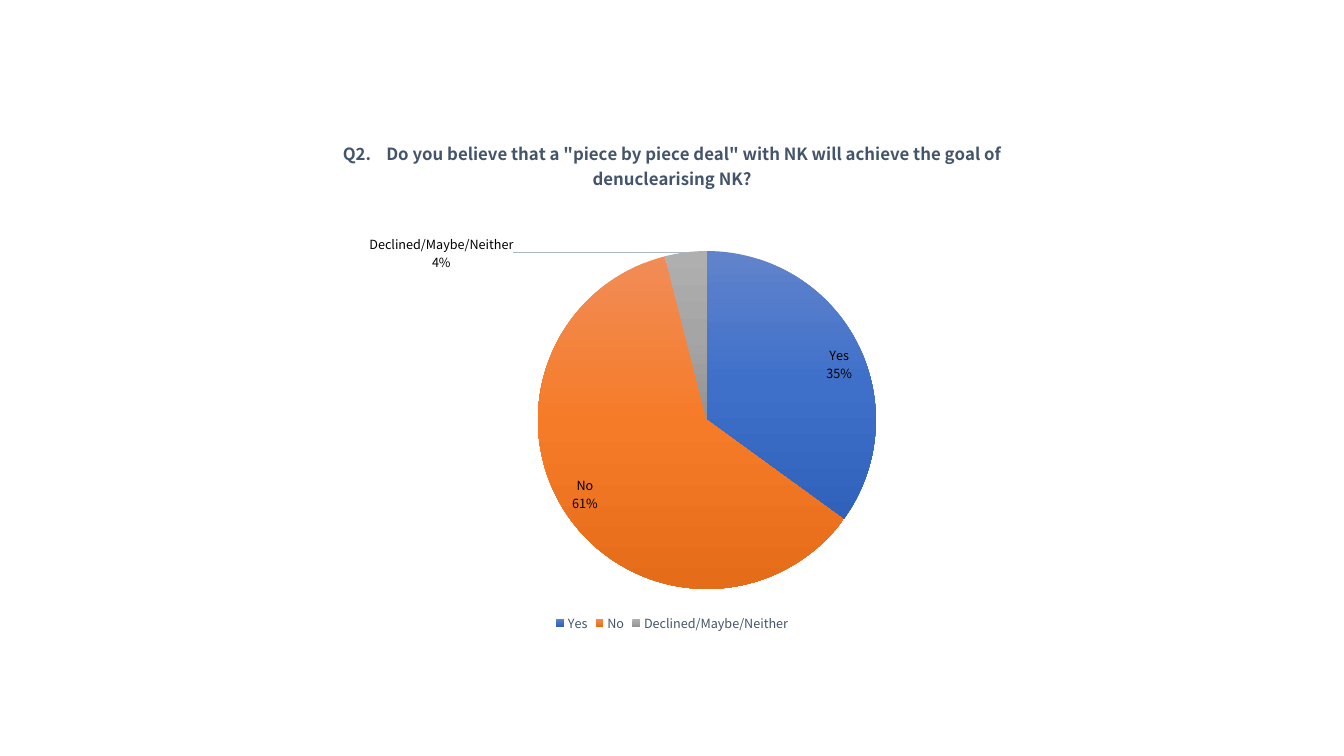
from copy import deepcopy

from pptx import Presentation
from pptx.chart.data import CategoryChartData
from pptx.dml.color import RGBColor
from pptx.enum.chart import XL_CHART_TYPE as CT, XL_LABEL_POSITION as LP, XL_LEGEND_POSITION as LG
from pptx.oxml import parse_xml
from pptx.oxml.ns import nsdecls, qn
from pptx.util import Pt

FONT = "Noto Sans CJK KR"
COLORS = {"text": "44546A", "label": "000000", "leader": "A9BAC6"}
SLICES = {
    "Yes": (35, ["6183CB", "3E70CA", "3062BB"]),
    "No": (61, ["F18C57", "F67B28", "E56C19"]),
    "Declined/Maybe/Neither": (4, ["AFAFAF", "A5A5A5", "939393"]),
}
QUESTION = 'Q2.    Do you believe that a "piece by piece deal" with NK will achieve the goal of denuclearising NK?'


def set_font(font, size, color, bold=False):
    font.name, font.size, font.bold = FONT, Pt(size), bold
    font.color.rgb = RGBColor.from_string(COLORS[color])


def make_layout(**values):
    tags = "".join(f'<c:{k} val="{v}"/>' for k, v in values.items())
    return parse_xml(f'<c:layout {nsdecls("c")}><c:manualLayout>{tags}</c:manualLayout></c:layout>')


prs = Presentation()
prs.slide_width, prs.slide_height = Pt(960), Pt(540)
s = prs.slides.add_slide(prs.slide_layouts[6])

data = CategoryChartData()
data.categories = list(SLICES)
data.add_series(QUESTION, [value for value, _ in SLICES.values()])
chart = s.shapes.add_chart(CT.PIE, Pt(154), Pt(85.7), Pt(652.3), Pt(368.6), data).chart
set_font(chart.font, 10, "label")

chart.has_title = True
tf = chart.chart_title.text_frame
tf.text = QUESTION
set_font(tf.paragraphs[0].runs[0].font, 12, "text", True)

chart.has_legend = True
chart.legend.position = LG.BOTTOM
chart.legend.include_in_layout = False
set_font(chart.legend.font, 9, "text")

plot = chart.plots[0]
plot.vary_by_categories = True
plot_area = chart.element.find(".//" + qn("c:plotArea"))
for old in plot_area.findall(qn("c:layout")):
    plot_area.remove(old)
plot_area.insert(0, make_layout(layoutTarget="inner", xMode="edge", yMode="edge",
                                x=0.353, y=0.254, w=0.37, h=0.655))

series = plot.series[0]
for i, (_, shades) in enumerate(SLICES.values()):
    fill = series.points[i].format.fill
    fill.gradient()
    fill.gradient_angle = 270
    stops = list(series._element.iter(qn("a:gsLst")))[i]
    stops.insert(1, deepcopy(stops[0]))
    for stop, position, shade in zip(fill.gradient_stops, (0, 0.5, 1), shades):
        stop.position = position
        stop.color.rgb = RGBColor.from_string(shade)

labels = series.data_labels
labels.show_value = False
labels.show_category_name = True
labels.show_percentage = True
labels.number_format = "0%"
labels.number_format_is_linked = False
labels.position = LP.INSIDE_END
set_font(labels.font, 9, "label")

declined = series.points[2].data_label
declined.position = LP.OUTSIDE_END
set_font(declined.font, 9, "label")
d_lbls = series._element.find(qn("c:dLbls"))
d_lbl = d_lbls.find(qn("c:dLbl"))
d_lbl.insert(1, make_layout(x=-0.188, y=0.047))
for tag, val in (("showVal", "0"), ("showCatName", "1"), ("showPercent", "1")):
    d_lbl.find(qn("c:" + tag)).set("val", val)

for parent in (d_lbl, d_lbls):
    last = parent.find(qn("c:showBubbleSize"))
    if last is None:
        last = parent.find(qn("c:showPercent"))
    last.addnext(parse_xml(f'<c:separator {nsdecls("c")}>\n</c:separator>'))
for old in d_lbls.findall(qn("c:showLeaderLines")):
    d_lbls.remove(old)
d_lbls.append(parse_xml(f'<c:showLeaderLines {nsdecls("c")} val="1"/>'))
d_lbls.append(parse_xml(
    f'<c:leaderLines {nsdecls("c", "a")}><c:spPr><a:ln w="9525"><a:solidFill>'
    f'<a:srgbClr val="{COLORS["leader"]}"/></a:solidFill></a:ln></c:spPr></c:leaderLines>'))

prs.save("out.pptx")
